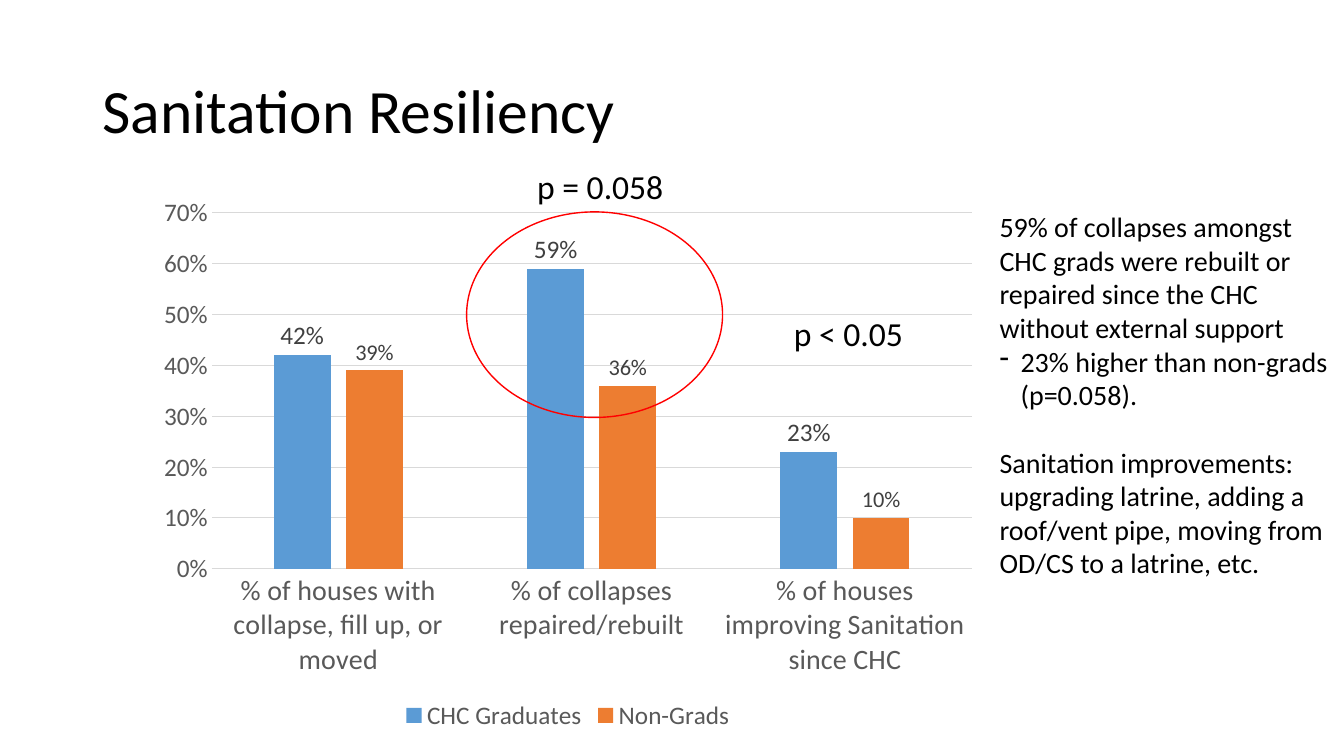
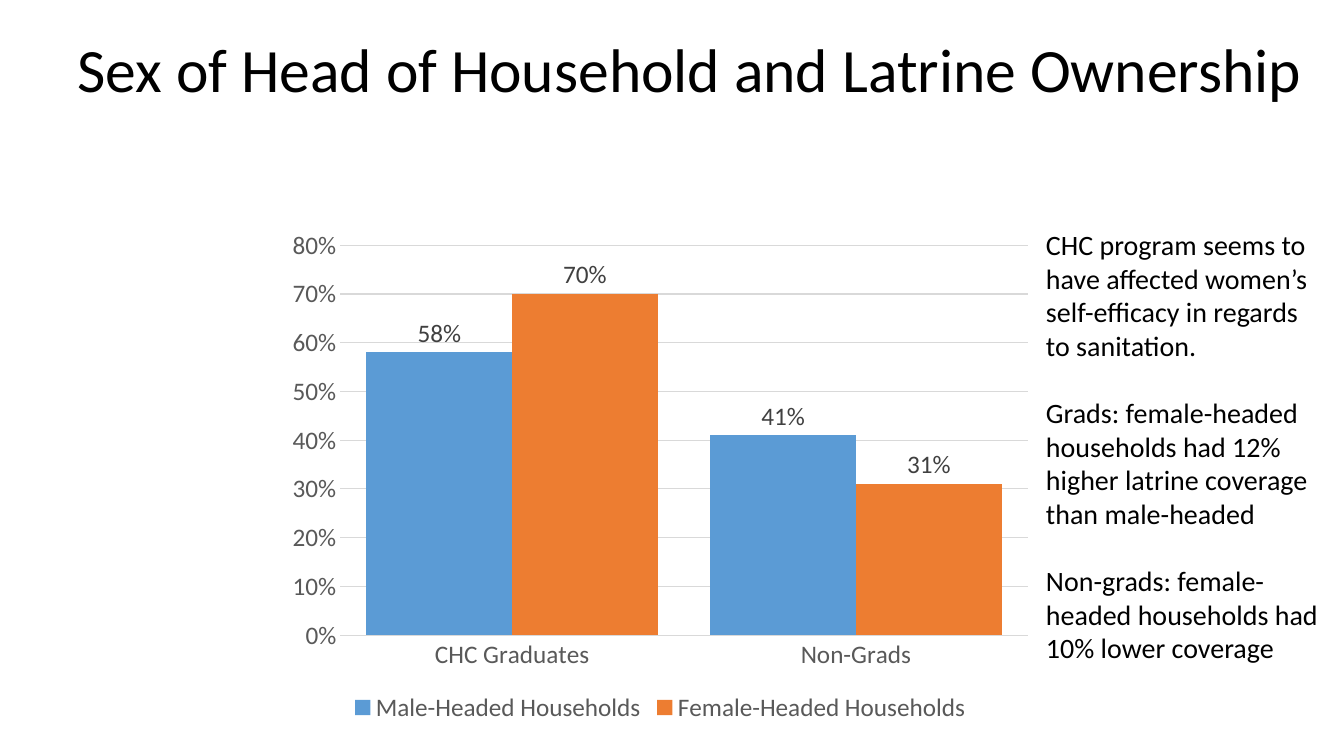
from dataclasses import dataclass

from lxml.etree import SubElement
from pptx import Presentation
from pptx.chart.data import CategoryChartData
from pptx.dml.color import RGBColor
from pptx.enum.chart import XL_CHART_TYPE as ChartType
from pptx.enum.chart import XL_LABEL_POSITION as LabelPosition
from pptx.enum.chart import XL_LEGEND_POSITION as LegendPosition
from pptx.enum.chart import XL_TICK_MARK as TickMark
from pptx.enum.shapes import MSO_SHAPE as Shape
from pptx.enum.text import MSO_ANCHOR as Anchor
from pptx.enum.text import MSO_AUTO_SIZE as AutoSize
from pptx.enum.text import PP_ALIGN as Align
from pptx.oxml.ns import qn
from pptx.util import Cm, Pt


@dataclass(frozen=True)
class Theme:
    font: str = "Calibri"
    text: str = "000000"
    axis: str = "595959"
    grid: str = "D9D9D9"
    label: str = "404040"
    highlight: str = "FF0000"
    series: tuple = ("5B9BD5", "ED7D31")
    title_size: int = 44
    callout_size: int = 24
    body_size: int = 20
    chart_size: int = 18
    small_label_size: int = 16


@dataclass(frozen=True)
class Box:
    """A region in centimetres."""
    left: float
    top: float
    width: float
    height: float

    def inner(self, left, top, width, height):
        return Box(self.left + left, self.top + top, width, height)

    def lengths(self):
        return [Cm(side) for side in (self.left, self.top, self.width, self.height)]


THEME = Theme()
TITLE_ONLY = 5
DASH_INDENT = Cm(0.53)


def style_font(font, size, color=THEME.text):
    font.name = THEME.font
    font.size = Pt(size)
    font.bold = False
    font.color.rgb = RGBColor.from_string(color)


def style_line(line, color, width=0.75):
    line.color.rgb = RGBColor.from_string(color)
    line.width = Pt(width)


def add_dash(paragraph):
    properties = paragraph._p.get_or_add_pPr()
    properties.set("marL", str(DASH_INDENT))
    properties.set("indent", str(-DASH_INDENT))
    SubElement(properties, qn("a:buChar")).set("char", "-")


def write_text(frame, *texts, size=THEME.body_size, gap=0, line_spacing=None, wrap=True,
               anchor=Anchor.TOP):
    """Fill a frame; a text that starts with "- " becomes a dashed item without a gap."""
    frame.word_wrap = wrap
    frame.auto_size = AutoSize.NONE
    frame.vertical_anchor = anchor
    for index, text in enumerate(texts):
        paragraph = frame.add_paragraph() if index else frame.paragraphs[0]
        dashed = text.startswith("- ")
        if index and gap and not dashed:
            paragraph.space_before = Pt(gap)
        if line_spacing:
            paragraph.line_spacing = line_spacing
        paragraph.alignment = Align.LEFT
        if dashed:
            add_dash(paragraph)
        run = paragraph.add_run()
        run.text = text.removeprefix("- ")
        style_font(run.font, size)


def add_text(slide, box, *texts, **text_format):
    shape = slide.shapes.add_textbox(*box.lengths())
    write_text(shape.text_frame, *texts, **text_format)


def add_title_slide(presentation, title, box):
    slide = presentation.slides.add_slide(presentation.slide_layouts[TITLE_ONLY])
    shape = slide.shapes.title
    shape.left, shape.top, shape.width, shape.height = box.lengths()
    write_text(shape.text_frame, title, size=THEME.title_size, line_spacing=0.9,
               anchor=Anchor.MIDDLE)
    return slide


def style_axes(chart, maximum, category_size):
    category, value = chart.category_axis, chart.value_axis
    for axis, size in ((category, category_size), (value, THEME.chart_size)):
        axis.major_tick_mark = axis.minor_tick_mark = TickMark.NONE
        style_font(axis.tick_labels.font, size, THEME.axis)
    style_line(category.format.line, THEME.grid)
    value.format.line.fill.background()
    value.minimum_scale, value.maximum_scale, value.major_unit = 0, maximum, 0.1
    value.tick_labels.number_format = "0%"
    value.tick_labels.number_format_is_linked = False
    style_line(value.major_gridlines.format.line, THEME.grid)


def style_series(series, color, label_size):
    series.invert_if_negative = False
    series.format.fill.solid()
    series.format.fill.fore_color.rgb = RGBColor.from_string(color)
    labels = series.data_labels
    labels.show_value = True
    labels.position = LabelPosition.OUTSIDE_END
    labels.number_format = "0%"
    labels.number_format_is_linked = False
    style_font(labels.font, label_size, THEME.label)


def add_column_chart(slide, box, categories, series, maximum, gap_width, overlap=0,
                     category_size=THEME.chart_size,
                     label_sizes=(THEME.chart_size, THEME.chart_size)):
    data = CategoryChartData(number_format="0%")
    data.categories = categories
    for name, values in series.items():
        data.add_series(name, values)
    chart = slide.shapes.add_chart(ChartType.COLUMN_CLUSTERED, *box.lengths(), data).chart
    style_font(chart.font, THEME.chart_size, THEME.axis)
    chart.has_title = False
    chart.has_legend = True
    chart.legend.position = LegendPosition.BOTTOM
    chart.legend.include_in_layout = False
    style_font(chart.legend.font, THEME.chart_size, THEME.axis)
    style_axes(chart, maximum, category_size)
    plot = chart.plots[0]
    plot.vary_by_categories = False
    plot.gap_width, plot.overlap = gap_width, overlap
    for item, color, size in zip(plot.series, THEME.series, label_sizes):
        style_series(item, color, size)


def add_significance(slide, chart_box):
    """Mark the p-values and circle the repaired collapses over the chart."""
    for text, box in (
        ("p = 0.058", chart_box.inner(9.58, -0.64, 3.7, 1.28)),
        ("p < 0.05", chart_box.inner(16.05, 3.05, 3.28, 1.28)),
    ):
        add_text(slide, box, text, size=THEME.callout_size, wrap=False)
    ring = slide.shapes.add_shape(Shape.OVAL, *chart_box.inner(8.05, 0.64, 6.45, 5.18).lengths())
    ring.shadow.inherit = False
    ring.fill.background()
    style_line(ring.line, THEME.highlight, 1)


def build_resiliency_slide(presentation):
    slide = add_title_slide(presentation, "Sanitation Resiliency", Box(2.33, 1.01, 29.21, 3.68))
    chart_box = Box(3.71, 4.7, 21.2, 13.84)
    add_column_chart(
        slide, chart_box,
        ("% of houses with collapse, fill up, or moved",
         "% of collapses repaired/rebuilt",
         "% of houses improving Sanitation since CHC"),
        {"CHC Graduates": (0.42, 0.59, 0.23), "Non-Grads": (0.39, 0.36, 0.1)},
        maximum=0.7, gap_width=219, overlap=-27, category_size=THEME.body_size,
        label_sizes=(THEME.chart_size, THEME.small_label_size),
    )
    add_significance(slide, chart_box)
    add_text(
        slide, Box(24.94, 5.16, 8.92, 9.65),
        "59% of collapses amongst CHC grads were rebuilt or repaired since the CHC "
        "without external support",
        "- 23% higher than non-grads (p=0.058).",
        "Sanitation improvements: upgrading latrine, adding a roof/vent pipe, moving from "
        "OD/CS to a latrine, etc.",
        gap=24,
    )


def build_ownership_slide(presentation):
    slide = add_title_slide(presentation, "Sex of Head of Household and Latrine Ownership",
                            Box(1.7, 0, 31.55, 3.68))
    add_column_chart(
        slide, Box(6.99, 5.54, 19.3, 12.8),
        ("CHC Graduates", "Non-Grads"),
        {"Male-Headed Households": (0.58, 0.41), "Female-Headed Households": (0.7, 0.31)},
        maximum=0.8, gap_width=36,
    )
    add_text(
        slide, Box(26.11, 5.61, 7.57, 11.38),
        "CHC program seems to have affected women’s self-efficacy in regards to sanitation.",
        "Grads: female-headed households had 12% higher latrine coverage than male-headed",
        "Non-grads: female-headed households had 10% lower coverage",
        gap=24,
    )


def main():
    presentation = Presentation()
    presentation.slide_width, presentation.slide_height = Cm(33.87), Cm(19.05)
    build_resiliency_slide(presentation)
    build_ownership_slide(presentation)
    presentation.save("out.pptx")


if __name__ == "__main__":
    main()
